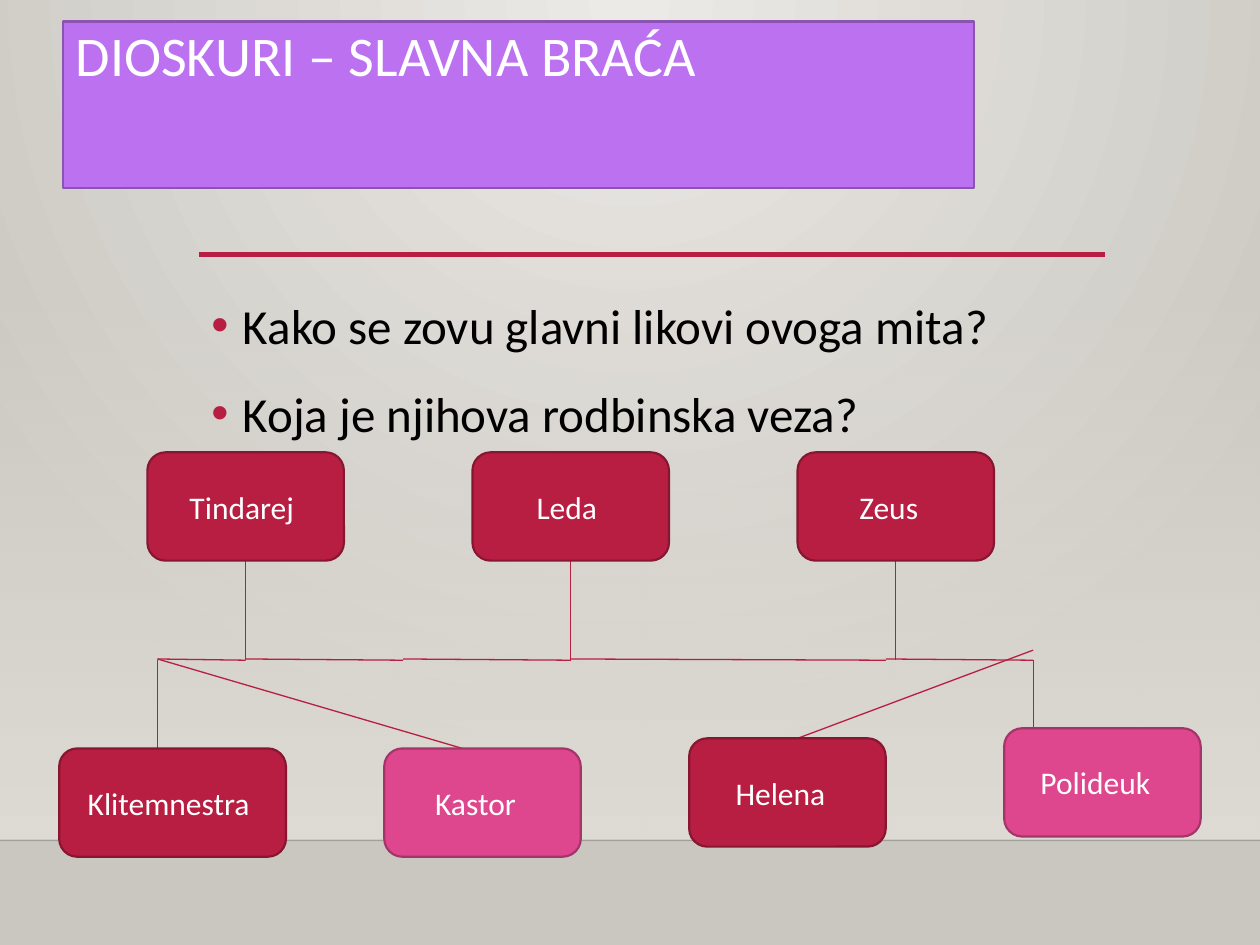
"""Build the slide on the Dioscuri: two questions above a family tree."""
from itertools import pairwise

from lxml import etree
from pptx import Presentation
from pptx.dml.color import RGBColor
from pptx.enum.shapes import MSO_CONNECTOR, MSO_SHAPE
from pptx.enum.text import MSO_ANCHOR, MSO_AUTO_SIZE, PP_ALIGN
from pptx.oxml import parse_xml
from pptx.oxml.ns import qn
from pptx.util import Inches, Pt

STRAIGHT = MSO_CONNECTOR.STRAIGHT
RECTANGLE, ROUNDED = MSO_SHAPE.RECTANGLE, MSO_SHAPE.ROUNDED_RECTANGLE
TOP, MIDDLE = MSO_ANCHOR.TOP, MSO_ANCHOR.MIDDLE
LEFT, CENTER = PP_ALIGN.LEFT, PP_ALIGN.CENTER
NO_AUTOFIT = MSO_AUTO_SIZE.NONE
NS = 'xmlns:a="http://schemas.openxmlformats.org/drawingml/2006/main"'
FONT = "Calibri"
RED, DARK_RED = "B71E42", "871631"
PINK, DARK_PINK = "DE478E", "A43569"


def color(hex_value):
    return RGBColor.from_string(hex_value)


def add_line(start, end, hex_value, width):
    line = slide.shapes.add_connector(STRAIGHT, *map(Inches, start + end))
    line.line.color.rgb = color(hex_value)
    line.line.width = Pt(width)
    etree.SubElement(line.line._get_or_add_ln().getparent(), qn("a:effectLst"))
    return line


prs = Presentation()
prs.slide_width, prs.slide_height = Inches(10), Inches(7.5)
slide = prs.slides.add_slide(prs.slide_layouts[5])

backdrop = slide.background.fill
backdrop.gradient()
for stop, shade in zip(backdrop.gradient_stops, ("ECEAE7", "CAC7C1")):
    stop.color.rgb = color(shade)
    stop.position = 0 if shade == "ECEAE7" else 1
direction = next(slide.element.iter(qn("a:lin")))
direction.getparent().replace(direction, parse_xml(
    f'<a:path {NS} path="circle">'
    '<a:fillToRect l="43000" t="0" r="43000" b="100000"/></a:path>'))

wall = slide.shapes.add_shape(RECTANGLE, 0, Inches(2.2), Inches(10), Inches(4.46))
wall.shadow.inherit = False
wall.line.fill.background()
wall.fill.gradient()
wall.fill.gradient_angle = 270
for stop, position in zip(wall.fill.gradient_stops, (0, 1)):
    stop.color.rgb = color("DFDBD5")
    stop.position = position
clear_stop = next(wall.element.iter(qn("a:srgbClr")))
etree.SubElement(clear_stop, qn("a:alpha"), val="0")

floor_edge = add_line((0, 6.67), (10, 6.67), "000001", 1)
edge_color = next(floor_edge.element.iter(qn("a:srgbClr")))
etree.SubElement(edge_color, qn("a:alpha"), val="20000")
add_line((1.58, 2.02), (8.77, 2.02), RED, 2.5)

title = slide.shapes.title
title.left, title.top = Inches(0.5), Inches(0.17)
title.width, title.height = Inches(7.23), Inches(1.32)
title.fill.solid()
title.fill.fore_color.rgb = color("BC72F0")
title.line.color.rgb = color("8B54B2")
title.line.width = Pt(1.25)
title.text_frame.text = "DIOSKURI – SLAVNA BRAĆA"
title.text_frame.vertical_anchor = TOP
title.text_frame.auto_size = NO_AUTOFIT
heading = title.text_frame.paragraphs[0]
heading.alignment = LEFT
heading.line_spacing = 0.9
heading.font.name, heading.font.size = FONT, Pt(32)
heading.font.color.rgb = color("FFFFFF")

questions = slide.shapes.add_textbox(
    Inches(1.58), Inches(2.2), Inches(7.19), Inches(3.77)).text_frame
questions.word_wrap = True
questions.text = "Kako se zovu glavni likovi ovoga mita?\nKoja je njihova rodbinska veza?"
for index, question in enumerate(questions.paragraphs):
    question.line_spacing = 1.2
    question.space_before = Pt(10 if index else 0)
    layout = question._p.get_or_add_pPr()
    layout.set("marL", str(Inches(0.25)))
    layout.set("indent", str(-Inches(0.25)))
    layout.append(parse_xml(f'<a:buClr {NS}><a:srgbClr val="{RED}"/></a:buClr>'))
    layout.append(parse_xml(f'<a:buFont {NS} typeface="Arial"/>'))
    layout.append(parse_xml(f'<a:buChar {NS} char="•"/>'))
    question.font.name, question.font.size = FONT, Pt(28)
    question.font.color.rgb = color("000000")

parent_drops = [((x, 4.45), (x, 5.24)) for x in (1.95, 4.53, 7.11)]
sibling_bar = [((a, 5.23), (b, 5.24))
               for a, b in pairwise((1.25, 1.95, 3.2, 4.53, 7.03, 8.2))]
child_drops = [
    ((1.25, 5.24), (1.25, 6.02)),
    ((1.25, 5.23), (3.67, 5.94)),
    ((8.2, 5.16), (6.33, 5.86)),
    ((8.2, 5.24), (8.2, 5.78)),
]
for start, end in parent_drops + sibling_bar + child_drops:
    add_line(start, end, RED, 0.75)

family = [
    ("Tindarej", 1.17, 3.59, 1.56, RED, DARK_RED, 0.16),
    ("Leda", 3.75, 3.59, 1.56, RED, DARK_RED, 0.16),
    ("Zeus", 6.33, 3.59, 1.56, RED, DARK_RED, 0.21),
    ("Klitemnestra", 0.47, 5.94, 1.8, RED, DARK_RED, 0.16),
    ("Kastor", 3.05, 5.94, 1.56, PINK, DARK_PINK, 0.21),
    ("Helena", 5.47, 5.86, 1.56, RED, DARK_RED, 0.21),
    ("Polideuk", 7.97, 5.78, 1.56, PINK, DARK_PINK, 0.21),
]
for name, left, top, width, fill, outline, right_margin in family:
    member = slide.shapes.add_shape(
        ROUNDED, Inches(left), Inches(top), Inches(width), Inches(0.86))
    member.shadow.inherit = False
    member.fill.solid()
    member.fill.fore_color.rgb = color(fill)
    member.line.color.rgb = color(outline)
    member.line.width = Pt(1.25)
    member.text_frame.text = name
    member.text_frame.vertical_anchor = MIDDLE
    member.text_frame.margin_right = Inches(right_margin)
    label = member.text_frame.paragraphs[0]
    label.alignment = CENTER
    label.font.name, label.font.size = FONT, Pt(18)
    label.font.color.rgb = color("FFFFFF")

prs.save("out.pptx")
